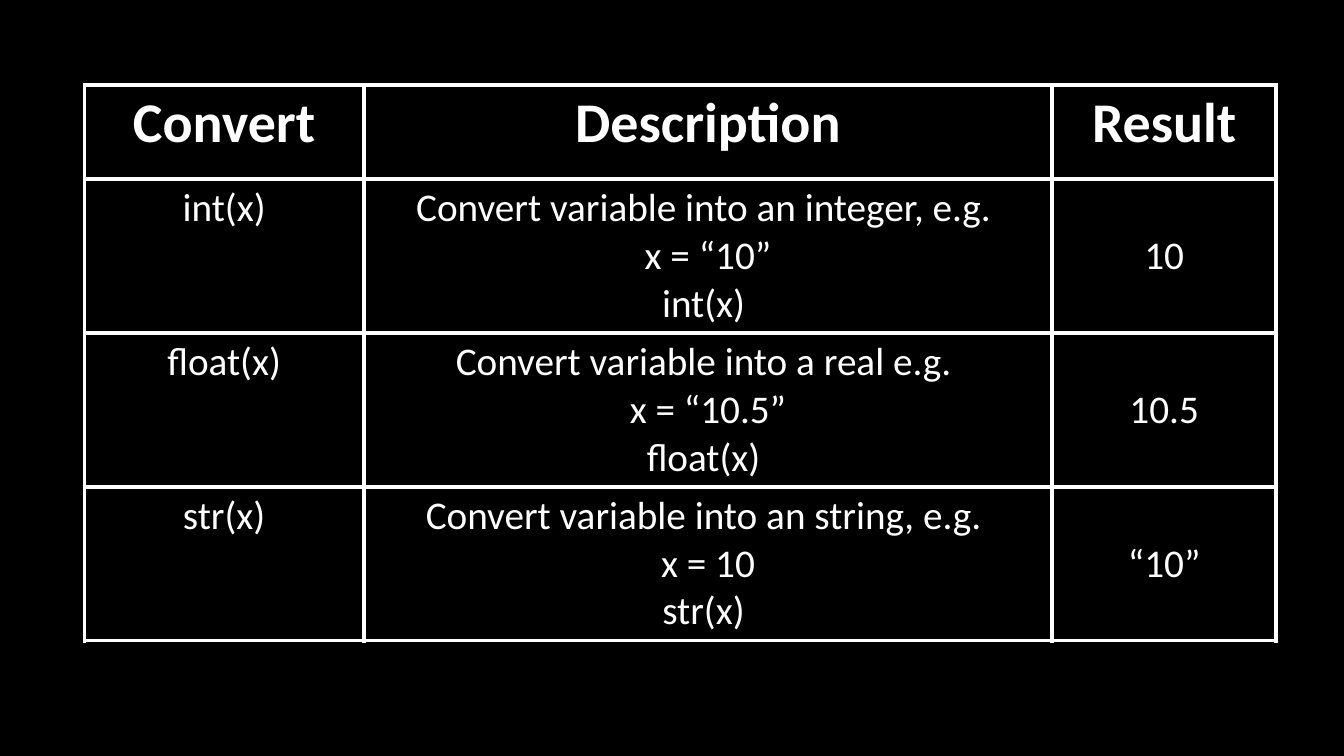
from lxml import etree
from pptx import Presentation
from pptx import util as u
from pptx.dml.color import RGBColor
from pptx.enum import text
from pptx.oxml import ns

GRID_COLUMNS, GRID_ROWS = 48, 40
BLACK, WHITE = "000000", "FFFFFF"

COLUMN_WIDTHS = [9.97, 24.59, 8]
ROW_HEIGHTS = [5, 8.11, 8.11, 8.11]
HEADINGS = ["Convert", "Description", "Result"]
CONVERSIONS = [
    ("int(x)", "an integer, e.g. ", "x = “10”", "10"),
    ("float(x)", "a real e.g. ", "x = “10.5”", "10.5"),
    ("str(x)", "an string, e.g. ", "x = 10", "“10”"),
]


def color(hex_string):
    return RGBColor.from_string(hex_string)


class ConversionSlide:
    font_name = "Calibri"
    heading_size, body_size = 40, 28
    border_width = 3

    def __init__(self, presentation):
        self.column = presentation.slide_width / GRID_COLUMNS
        self.row = presentation.slide_height / GRID_ROWS
        self.slide = presentation.slides.add_slide(presentation.slide_layouts[6])

    def background(self, fill_color):
        fill = self.slide.background.fill
        fill.solid()
        fill.fore_color.rgb = color(fill_color)

    def table(self, left, top, widths, heights):
        """Add a table; every length is in grid columns or grid rows."""
        frame = self.slide.shapes.add_table(
            len(heights), len(widths),
            round(left * self.column), round(top * self.row),
            round(sum(widths) * self.column), round(sum(heights) * self.row))
        table = frame.table
        for table_column, width in zip(table.columns, widths):
            table_column.width = round(width * self.column)
        for table_row, height in zip(table.rows, heights):
            table_row.height = round(height * self.row)
        return table

    def borders(self, cell):
        properties = cell._tc.get_or_add_tcPr()
        for side in ("a:lnL", "a:lnR", "a:lnT", "a:lnB"):
            line = etree.SubElement(properties, ns.qn(side),
                                    w=str(u.Pt(self.border_width)))
            fill = etree.SubElement(line, ns.qn("a:solidFill"))
            etree.SubElement(fill, ns.qn("a:srgbClr"), val=WHITE)

    def cell(self, cell, lines, heading=False, anchor=text.MSO_ANCHOR.TOP):
        self.borders(cell)
        cell.fill.solid()
        cell.fill.fore_color.rgb = color(BLACK)
        cell.vertical_anchor = anchor
        frame = cell.text_frame
        for index, line in enumerate(lines):
            paragraph = frame.add_paragraph() if index else frame.paragraphs[0]
            paragraph.alignment = text.PP_ALIGN.CENTER
            run = paragraph.add_run()
            run.text = line
            run.font.name = self.font_name
            run.font.size = u.Pt(self.heading_size if heading else self.body_size)
            run.font.bold = heading
            run.font.color.rgb = color(WHITE)


def main():
    presentation = Presentation()
    presentation.slide_width = u.Inches(13.33)
    presentation.slide_height = u.Inches(7.5)

    slide = ConversionSlide(presentation)
    slide.background(BLACK)
    table = slide.table(3.02, 4.48, COLUMN_WIDTHS, ROW_HEIGHTS)

    for column, heading in enumerate(HEADINGS):
        slide.cell(table.cell(0, column), [heading], heading=True)
    for row, (function, target, example, result) in enumerate(CONVERSIONS, start=1):
        description = [f"Convert variable into {target}", example, f"{function} "]
        slide.cell(table.cell(row, 0), [function])
        slide.cell(table.cell(row, 1), description)
        slide.cell(table.cell(row, 2), [result], anchor=text.MSO_ANCHOR.MIDDLE)

    presentation.save("out.pptx")


if __name__ == "__main__":
    main()
